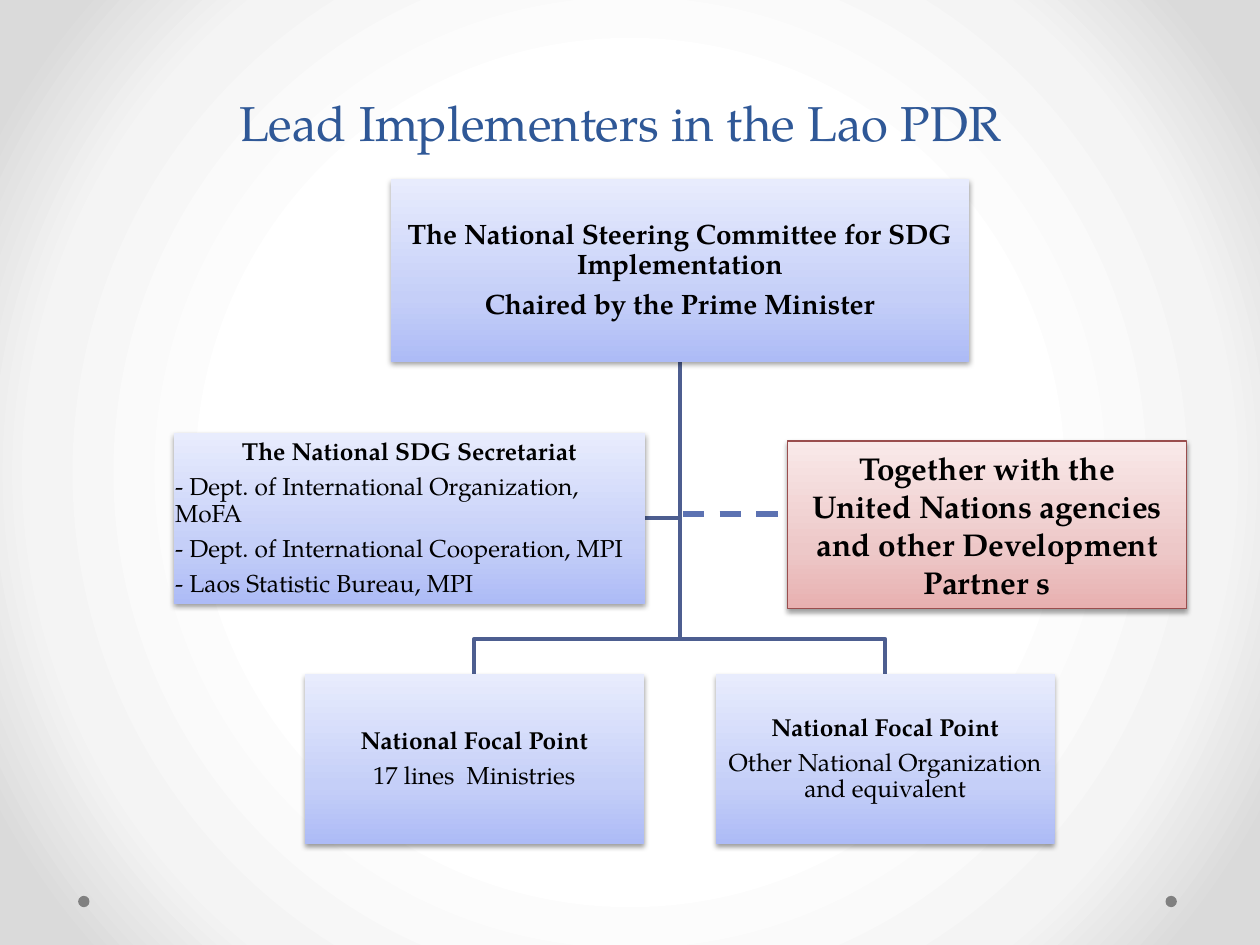
"""Build the slide on lead implementers in the Lao PDR."""
from lxml import etree
from pptx import Presentation
from pptx.dml.color import RGBColor
from pptx.enum import dml, shapes, text
from pptx.oxml.ns import qn
from pptx.util import Inches, Pt

FONT = "TeX Gyre Pagella"
COLORS = {"title": "2F5897", "ink": "000000", "tree": "4D5E90", "dash": "5C72B2",
          "partner": "9A4E4E", "dot": "808080"}
BACKDROP = [(50, "FFFFFF"), (76, "F4F4F4"), (92, "DADADA")]
BLUE = [(0, "ADBBF6"), (35, "C5CFF8"), (100, "E8ECFD")]
RED = [(0, "E8B0B0"), (35, "EDC8C8"), (100, "F9E9E9")]

TITLE = "Lead Implementers in the Lao PDR"
COMMITTEE = {"at": (3.1, 1.42, 4.59, 1.45), "size": 16, "bold": 2, "lines": [
    "The National Steering Committee for SDG Implementation",
    "Chaired by the Prime Minister"]}
SECRETARIAT = {"at": (1.38, 3.44, 3.74, 1.35), "size": 14, "bold": 1, "left": True, "lines": [
    "The National SDG Secretariat",
    "- Dept. of International Organization, MoFA",
    "- Dept. of International Cooperation, MPI",
    "- Laos Statistic Bureau, MPI"]}
FOCAL_POINTS = [
    {"at": (left, 5.35, 2.69, 1.35), "size": 14, "bold": 1,
     "lines": ["National Focal Point", members]}
    for left, members in [(2.42, "17 lines  Ministries"),
                          (5.68, "Other National Organization and equivalent")]]
PARTNERS = {"at": (6.25, 3.5, 3.17, 1.33), "size": 18, "bold": 2, "lines": [
    "Together with the",
    "United Nations agencies and other Development Partner s"]}


def color(name):
    return RGBColor.from_string(COLORS[name])


def add_xml(parent, tag, **attributes):
    return etree.SubElement(parent, qn(tag), {key: str(value) for key, value in attributes.items()})


def set_gradient(fill, owner, stops, radial=False):
    fill.gradient()
    gradient = next(owner.iter(qn("a:gradFill")))
    for child in list(gradient):
        gradient.remove(child)
    stop_list = add_xml(gradient, "a:gsLst")
    for position, value in stops:
        add_xml(add_xml(stop_list, "a:gs", pos=position * 1000), "a:srgbClr", val=value)
    if radial:
        circle = add_xml(gradient, "a:path", path="circle")
        add_xml(circle, "a:fillToRect", l=50000, t=50000, r=50000, b=50000)
    else:
        add_xml(gradient, "a:lin", ang=270 * 60000, scaled=0)


def set_shadow(shape):
    shape.shadow.inherit = False
    effects = next(shape.element.iter(qn("a:effectLst")))
    shadow = add_xml(effects, "a:outerShdw", blurRad=Pt(3.1), dist=Pt(1.6), dir=90 * 60000,
                     rotWithShape=0)
    add_xml(add_xml(shadow, "a:srgbClr", val=COLORS["ink"]), "a:alpha", val=38000)


def add_box(page, item, stops, outline=None):
    box = page.shapes.add_shape(shapes.MSO_SHAPE.RECTANGLE, *map(Inches, item["at"]))
    set_gradient(box.fill, box.element, stops)
    if outline:
        box.line.color.rgb = color(outline)
        box.line.width = Pt(0.75)
    else:
        box.line.fill.background()
    set_shadow(box)
    frame = box.text_frame
    frame.word_wrap = True
    frame.vertical_anchor = text.MSO_ANCHOR.MIDDLE
    if not outline:
        frame.margin_left = frame.margin_right = Inches(0.01)
        frame.margin_top = frame.margin_bottom = Inches(0.01)
    for index, line in enumerate(item["lines"]):
        para = frame.add_paragraph() if index else frame.paragraphs[0]
        para.text = line
        flush = item.get("left") and index
        para.alignment = text.PP_ALIGN.LEFT if flush else text.PP_ALIGN.CENTER
        if not outline:
            para.line_spacing = 0.9
            para.space_after = Pt(item["size"] * 0.35)
        set_font(para, item["size"], "ink", index < item["bold"])


def set_font(para, size, name, bold=False):
    para.font.name = FONT
    para.font.size = Pt(size)
    para.font.bold = bold
    para.font.color.rgb = color(name)


def add_branch(page, points):
    start, *bends = [(Inches(x), Inches(y)) for x, y in points]
    builder = page.shapes.build_freeform(*start)
    builder.add_line_segments(bends, close=False)
    branch = builder.convert_to_shape()
    branch.fill.background()
    branch.line.color.rgb = color("tree")
    branch.line.width = Pt(2.25)
    branch.shadow.inherit = False


def add_tree(page):
    left, top, width, height = COMMITTEE["at"]
    trunk, start = left + width / 2, top + height
    left, top, width, height = SECRETARIAT["at"]
    middle = top + height / 2
    add_branch(page, [(trunk, start), (trunk, middle), (left + width, middle)])
    for point in FOCAL_POINTS:
        left, top, width, _ = point["at"]
        center, fork = left + width / 2, top - 0.28
        add_branch(page, [(trunk, start), (trunk, fork), (center, fork), (center, top)])


def main():
    deck = Presentation()
    deck.slide_width, deck.slide_height = Inches(10), Inches(7.5)
    page = deck.slides.add_slide(deck.slide_layouts[5])
    set_gradient(page.background.fill, page.element, BACKDROP, radial=True)

    title = page.shapes.title
    title.left, title.top, title.width, title.height = map(Inches, (0.42, -0.5, 9, 1.75))
    title.text_frame.text = TITLE
    title.text_frame.auto_size = text.MSO_AUTO_SIZE.NONE
    title.text_frame.vertical_anchor = text.MSO_ANCHOR.BOTTOM
    title.text_frame.paragraphs[0].alignment = text.PP_ALIGN.CENTER
    set_font(title.text_frame.paragraphs[0], 28, "title")

    for left in (0.62, 9.25):
        dot = page.shapes.add_shape(shapes.MSO_SHAPE.OVAL, *map(Inches, (left, 7.11, 0.09, 0.09)))
        dot.fill.solid()
        dot.fill.fore_color.rgb = color("dot")
        dot.line.fill.background()
        dot.shadow.inherit = False

    add_tree(page)
    for item in [COMMITTEE, *FOCAL_POINTS, SECRETARIAT]:
        add_box(page, item, BLUE)
    add_box(page, PARTNERS, RED, outline="partner")

    link = page.shapes.add_connector(shapes.MSO_CONNECTOR.STRAIGHT,
                                     *map(Inches, (5.42, 4.08, PARTNERS["at"][0], 4.08)))
    link.line.color.rgb = color("dash")
    link.line.width = Pt(3)
    link.line.dash_style = dml.MSO_LINE.DASH
    add_xml(link.element.spPr, "a:effectLst")
    deck.save("out.pptx")


if __name__ == "__main__":
    main()
